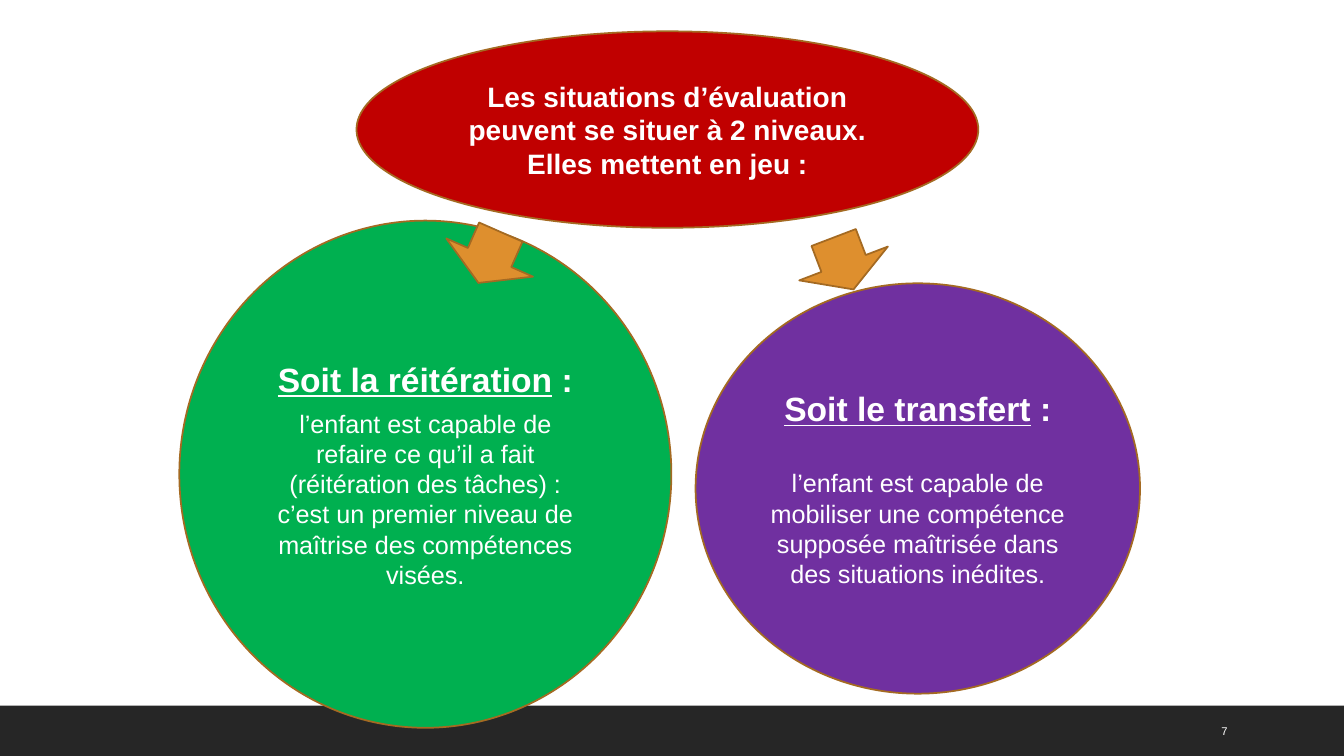
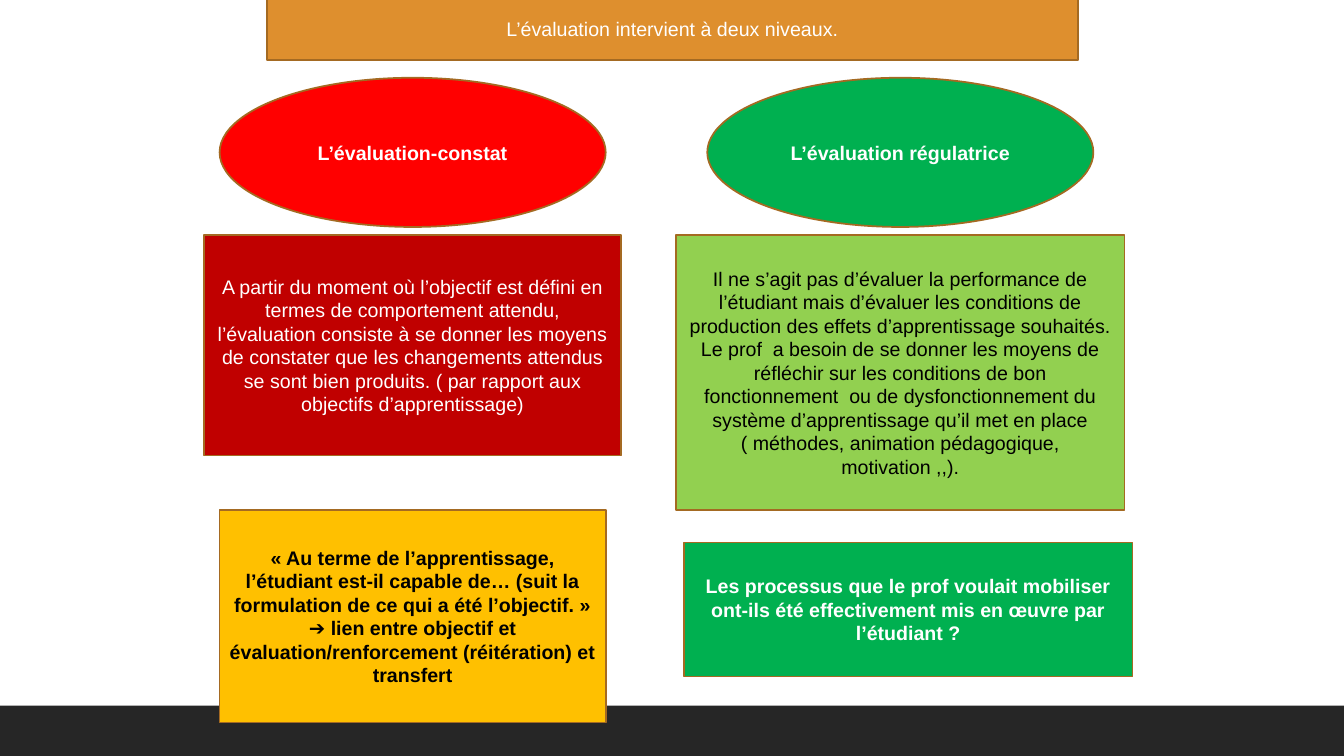
from dataclasses import dataclass

from pptx import Presentation
from pptx.dml.color import RGBColor
from pptx.enum.shapes import MSO_SHAPE as Kind
from pptx.enum.text import MSO_ANCHOR as Anchor, MSO_AUTO_SIZE as Fit, PP_ALIGN as Align
from pptx.util import Cm, Pt


@dataclass(frozen=True)
class Theme:
    font: str = "Arial"
    white: str = "FFFFFF"
    black: str = "000000"
    dark: str = "262626"
    edge: str = "A46A22"
    amber: str = "DE8F2E"
    brick: str = "C00000"
    red: str = "FF0000"
    green: str = "00B050"
    lime: str = "92D050"
    gold: str = "FFC000"
    plum: str = "7030A0"
    head: int = 24
    lead: int = 20
    body: int = 18
    text: int = 14
    note: int = 8
    line: float = 1.25


T = Theme()
WIDE, HIGH = 33.87, 19.05
BAND = 1.27
LEFT, RIGHT = 10.4, 22.69

INTRO = "Les situations d’évaluation peuvent se situer à 2 niveaux. Elles mettent en jeu :"
LEVELS = [
    ("Soit le transfert", 28,
     "l’enfant est capable de mobiliser une compétence supposée maîtrisée dans "
     "des situations inédites.",
     T.plum, (23.13, 7.14, 11.2, 10.34)),
    ("Soit la réitération", 6,
     "l’enfant est capable de refaire ce qu’il a fait (réitération des tâches) : "
     "c’est un premier niveau de maîtrise des compétences visées.",
     T.green, (10.72, 5.56, 12.4, 12.78)),
]
ARROWS = [(12.34, 5.79, 23.8), (21.26, 5.94, 339.1)]
PAGE = "7"

TITLE = "L’évaluation intervient à deux niveaux."
CARDS = [
    (Kind.OVAL, (LEFT, 1.96, 9.73, 3.76), T.red, T.white, True,
     "L’évaluation-constat"),
    (Kind.OVAL, (RIGHT, 1.96, 9.73, 3.76), T.green, T.white, True,
     "L’évaluation régulatrice"),
    (Kind.RECTANGLE, (LEFT, 5.92, 10.52, 5.56), T.brick, T.white, False,
     "A partir du moment où l’objectif est défini en termes de comportement "
     "attendu, l’évaluation consiste à se donner les moyens de constater que les "
     "changements attendus se sont bien produits. ( par rapport aux objectifs "
     "d’apprentissage)"),
    (Kind.RECTANGLE, (RIGHT, 5.92, 11.3, 6.93), T.lime, T.black, False,
     "Il ne s’agit pas d’évaluer la performance de l’étudiant mais d’évaluer les "
     "conditions de production des effets d’apprentissage souhaités. Le prof  a "
     "besoin de se donner les moyens de réfléchir sur les conditions de bon "
     "fonctionnement  ou de dysfonctionnement du système d’apprentissage qu’il "
     "met en place ( méthodes, animation pédagogique, motivation ,,)."),
    (Kind.RECTANGLE, (LEFT, 12.85, 9.73, 5.36), T.gold, T.black, True,
     "« Au terme de l’apprentissage, l’étudiant est-il capable de… (suit la "
     "formulation de ce qui a été l’objectif. » ➔ lien entre objectif et "
     "évaluation/renforcement (réitération) et transfert"),
    (Kind.RECTANGLE, (RIGHT + 0.2, 13.67, 11.3, 3.38), T.green, T.white, True,
     "Les processus que le prof voulait mobiliser ont-ils été effectivement mis "
     "en œuvre par l’étudiant ?"),
]


def place(mid, top, wide, high):
    return Cm(mid - wide / 2), Cm(top), Cm(wide), Cm(high)


def paint(shape, fill, edge=T.edge):
    shape.fill.solid()
    shape.fill.fore_color.rgb = RGBColor.from_string(fill)
    if edge:
        shape.line.color.rgb = RGBColor.from_string(edge)
        shape.line.width = Pt(T.line)
    else:
        shape.line.fill.background()


def draw(slide, kind, box, fill, edge=T.edge):
    shape = slide.shapes.add_shape(kind, *place(*box))
    shape.shadow.inherit = False
    paint(shape, fill, edge)
    return shape


def write(shape, *paras, align=Align.CENTER):
    frame = shape.text_frame
    frame.word_wrap = True
    frame.auto_size = Fit.NONE
    frame.vertical_anchor = Anchor.MIDDLE
    for i, (gap, runs) in enumerate(paras):
        para = frame.add_paragraph() if i else frame.paragraphs[0]
        para.alignment = align
        para.space_before = Pt(gap)
        for text, size, tint, bold, under in runs:
            run = para.add_run()
            run.text = text
            font = run.font
            font.name, font.size = T.font, Pt(size)
            font.bold, font.underline = bold, under
            font.color.rgb = RGBColor.from_string(tint)


def plain(text, size, tint=T.white, bold=False):
    return 0, [(text, size, tint, bold, False)]


def add_band(deck, slide):
    band = draw(slide, Kind.RECTANGLE,
                (WIDE / 2, HIGH - BAND, WIDE, BAND), T.dark, None)
    deck.slide_master.element.cSld.spTree.insert(2, band.element)


def fill_levels(slide):
    top = draw(slide, Kind.OVAL, (16.82, 0.79, 15.67, 4.95), T.brick)
    write(top, plain(INTRO, T.lead, bold=True))
    for name, gap, text, fill, box in LEVELS:
        write(draw(slide, Kind.OVAL, box, fill),
              (0, [(name, T.head, T.white, True, True),
                   (" :", T.head, T.white, True, False)]),
              (gap, [(text, T.body, T.white, False, False)]))
    for mid, y, turn in ARROWS:
        draw(slide, Kind.DOWN_ARROW, (mid, y, 2.39, 1.4), T.amber).rotation = turn
    page = slide.shapes.add_textbox(*place(31.61, 17.91, 2.16, 1.02))
    write(page, plain(PAGE, T.note), align=Align.LEFT)


def fill_cards(slide):
    title = slide.shapes.title
    title.left, title.top, title.width, title.height = place(16.95, -0.05, 20.45, 1.57)
    paint(title, T.amber)
    write(title, plain(TITLE, T.text))
    for kind, box, fill, tint, bold, text in CARDS:
        write(draw(slide, kind, box, fill), plain(text, T.text, tint, bold))


def main():
    deck = Presentation()
    deck.slide_width, deck.slide_height = Cm(WIDE), Cm(HIGH)
    only, blank = deck.slide_layouts[5], deck.slide_layouts[6]
    first = deck.slides.add_slide(blank)
    add_band(deck, first)
    fill_levels(first)
    fill_cards(deck.slides.add_slide(only))
    deck.save("out.pptx")


if __name__ == "__main__":
    main()
